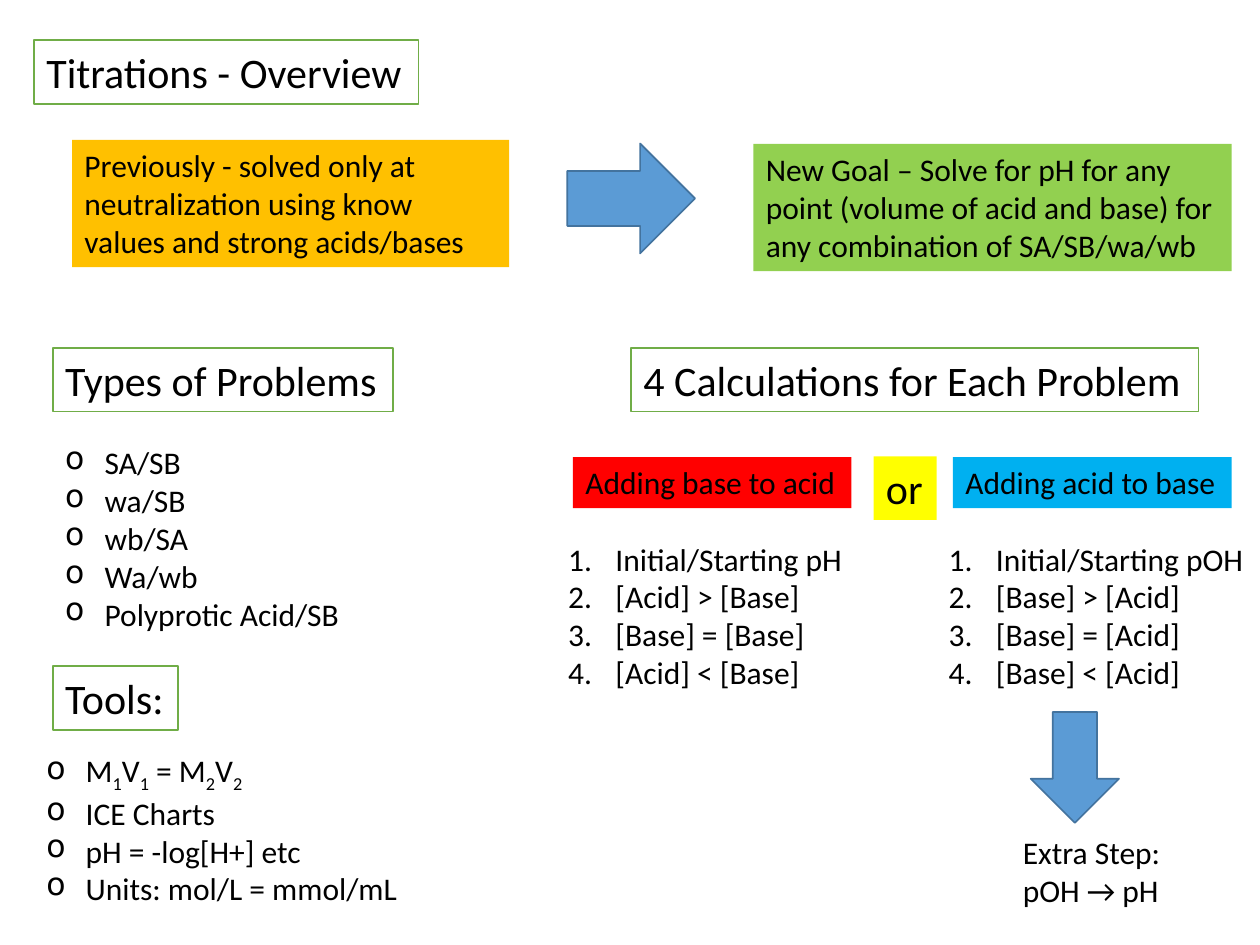
"""Build the titrations overview slide."""
from dataclasses import dataclass
from typing import Optional

import pptx
import pptx.dml.color
import pptx.enum.shapes
import pptx.enum.text
import pptx.oxml
import pptx.oxml.ns
import pptx.util

Pt = pptx.util.Pt
RGB = pptx.dml.color.RGBColor
BLACK = RGB(0x00, 0x00, 0x00)
WHITE = RGB(0xFF, 0xFF, 0xFF)
GREEN = RGB(0x70, 0xAD, 0x47)
LIME = RGB(0x92, 0xD0, 0x50)
AMBER = RGB(0xFF, 0xC0, 0x00)
YELLOW = RGB(0xFF, 0xFF, 0x00)
RED = RGB(0xFF, 0x00, 0x00)
CYAN = RGB(0x00, 0xB0, 0xF0)
BLUE = RGB(0x5B, 0x9B, 0xD5)
NAVY = RGB(0x43, 0x73, 0x9E)

DOT = '<a:buChar {} char="o"/>'
NUM = '<a:buAutoNum {} type="arabicPeriod"/>'
INDENT = {DOT: 22.5, NUM: 27}


@dataclass
class Box:
    left: float
    top: float
    width: float
    height: float
    lines: tuple[str, ...]
    size: float = 18
    fill: Optional[RGB] = None
    edge: Optional[RGB] = None
    mark: Optional[str] = None
    wrap: bool = False


@dataclass
class Arrow:
    left: float
    top: float
    width: float
    height: float
    turn: float = 0


def head(left: float, top: float, width: float, text: str) -> Box:
    return Box(left, top, width, 36.35, (text,), 24, WHITE, GREEN)


def label(left: float, text: str, fill: RGB) -> Box:
    return Box(left, 261.2, 159.2, 29.1, (text,), fill=fill)


def steps(left: float, width: float, *lines: str) -> Box:
    return Box(left, 304.8, width, 94.5, lines, mark=NUM)


BOXES = (
    head(19.4, 23, 219.7, "Titrations - Overview"),
    Box(41.2, 80, 249.7, 72.7,
        ("Previously - solved only at neutralization using know "
         "values and strong acids/bases",), fill=AMBER, wrap=True),
    Box(430.5, 82.2, 273.3, 72.7,
        ("New Goal – Solve for pH for any point (volume of acid and base) "
         "for any combination of SA/SB/wa/wb",), fill=LIME, wrap=True),
    head(30.2, 380.7, 71.4, "Tools:"),
    Box(19.4, 425.5, 217.4, 94.5,
        ("M_1V_1 = M_2V_2", "ICE Charts", "pH = -log[H+] etc",
         "Units: mol/L = mmol/mL"), mark=DOT),
    head(30.2, 198.8, 194.6, "Types of Problems"),
    Box(30.2, 249.8, 172.8, 116.3,
        ("SA/SB", "wa/SB", "wb/SA", "Wa/wb", "Polyprotic Acid/SB"), mark=DOT),
    head(360.6, 198.8, 324.3, "4 Calculations for Each Problem"),
    steps(317.6, 172.8, "Initial/Starting pH", "[Acid] > [Base]",
          "[Base] = [Base]", "[Acid] < [Base]"),
    steps(535, 185, "Initial/Starting pOH", "[Base] > [Acid]",
          "[Base] = [Acid]", "[Base] < [Acid]"),
    Box(499.2, 260.8, 36, 36.35, ("or",), 24, YELLOW),
    label(327.4, "Adding base to acid", RED),
    label(544.6, "Adding acid to base", CYAN),
    Box(577.4, 472.4, 93.6, 50.9, ("Extra Step:", "pOH → pH")),
)
ARROWS = (
    Arrow(324.2, 82, 73, 62.8),
    Arrow(582.5, 413.3, 63.4, 50.4, 90),
)


def write(para, text: str) -> None:
    """Add the text, lowering each character that follows an underscore."""
    first, *rest = text.split("_")
    para.add_run().text = first
    for part in rest:
        low = para.add_run()
        low.text = part[0]
        low.font._element.set("baseline", "-25000")
        if part[1:]:
            para.add_run().text = part[1:]


def bullet(para, mark: str) -> None:
    props = para._p.get_or_add_pPr()
    shift = Pt(INDENT[mark])
    props.set("marL", str(shift))
    props.set("indent", str(-shift))
    props.insert(0, pptx.oxml.parse_xml(
        mark.format(pptx.oxml.ns.nsdecls("a"))))


def draw_box(slide, box: Box) -> None:
    shape = slide.shapes.add_textbox(
        Pt(box.left), Pt(box.top), Pt(box.width), Pt(box.height))
    if box.fill is not None:
        shape.fill.solid()
        shape.fill.fore_color.rgb = box.fill
    if box.edge is not None:
        shape.line.color.rgb = box.edge
        shape.line.width = Pt(1)
    frame = shape.text_frame
    frame.word_wrap = box.wrap
    frame.auto_size = pptx.enum.text.MSO_AUTO_SIZE.SHAPE_TO_FIT_TEXT
    for spot, line in enumerate(box.lines):
        para = frame.add_paragraph() if spot else frame.paragraphs[0]
        write(para, line)
        para.font.name = "Calibri"
        para.font.size = Pt(box.size)
        para.font.color.rgb = BLACK
        if box.mark:
            bullet(para, box.mark)


def draw_arrow(slide, arrow: Arrow) -> None:
    shape = slide.shapes.add_shape(
        pptx.enum.shapes.MSO_SHAPE.RIGHT_ARROW,
        Pt(arrow.left), Pt(arrow.top), Pt(arrow.width), Pt(arrow.height))
    shape.rotation = arrow.turn
    shape.shadow.inherit = False
    shape.fill.solid()
    shape.fill.fore_color.rgb = BLUE
    shape.line.color.rgb = NAVY
    shape.line.width = Pt(1)


def main() -> None:
    deck = pptx.Presentation()
    deck.slide_width, deck.slide_height = Pt(720), Pt(540)
    slide = deck.slides.add_slide(deck.slide_layouts[6])
    for box in BOXES:
        draw_box(slide, box)
    for arrow in ARROWS:
        draw_arrow(slide, arrow)
    deck.save("out.pptx")


if __name__ == "__main__":
    main()
